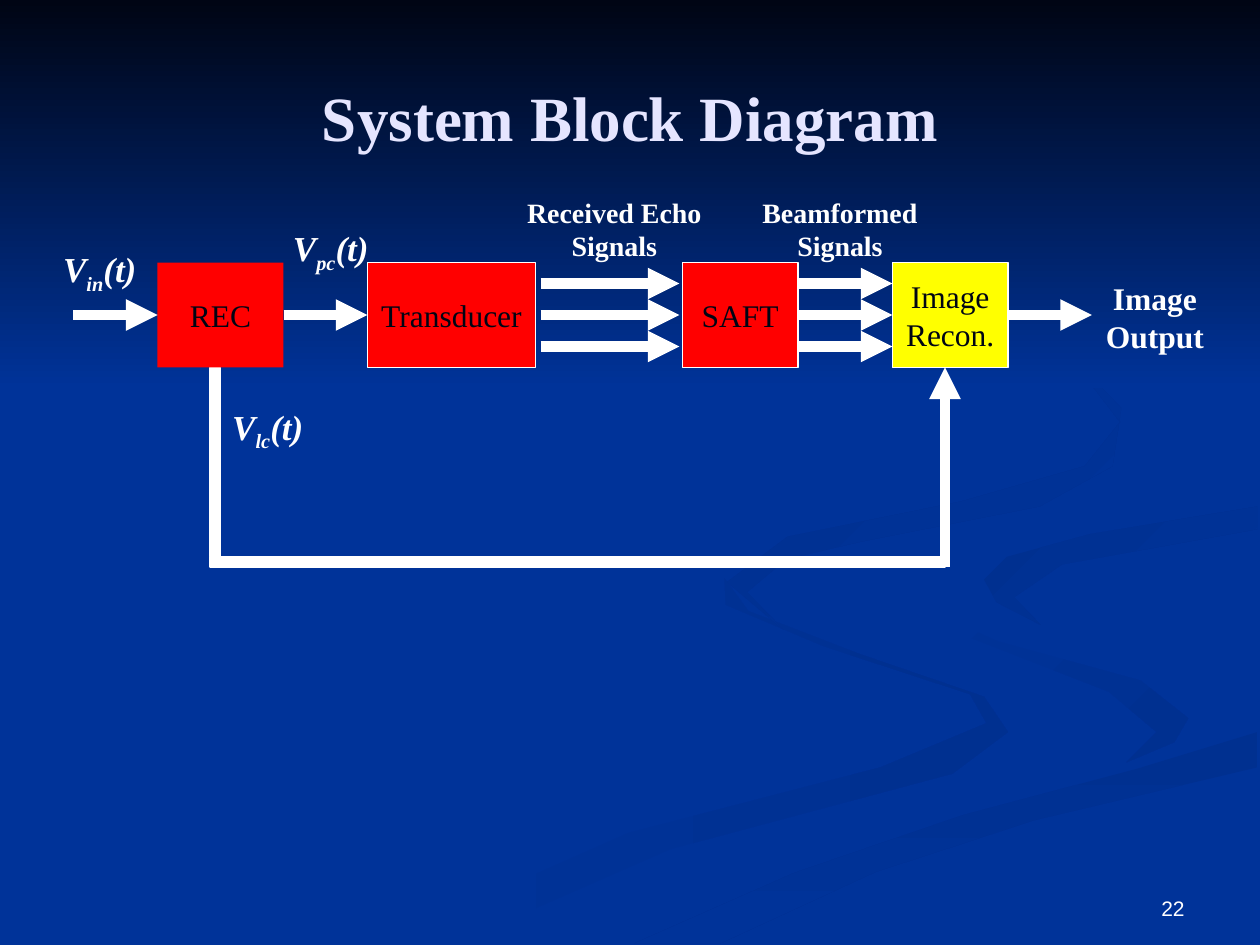
import pptx
import pptx.util
from pptx.dml.color import RGBColor
from pptx.enum.shapes import MSO_CONNECTOR, MSO_SHAPE
from pptx.enum.text import MSO_ANCHOR, PP_ALIGN
from pptx.oxml.ns import qn
from lxml import etree

BLUE = RGBColor(0x00, 0x33, 0x99)
NIGHT = RGBColor(0x00, 0x05, 0x14)
LAVENDER = RGBColor(0xE5, 0xE5, 0xFF)
WHITE = RGBColor(0xFF, 0xFF, 0xFF)
RED = RGBColor(0xFF, 0x00, 0x00)
YELLOW = RGBColor(0xFF, 0xFF, 0x00)
SHADE = RGBColor(0x00, 0x30, 0x90)

SERIF = "Times New Roman"
CELLS_PER_INCH = 12
TOP, MIDDLE, BOTTOM, LEFT, RIGHT = 25, 30, 35, 1, 3  # block rows, side numbers
SIGNAL_ROWS = (MIDDLE - 3, MIDDLE, MIDDLE + 3)

# Background ribbons: outline in hundredths of an inch, colours, gradient angle
RIBBONS = [
    ([(781, 553), (682, 519), (594, 485), (575, 459), (576, 480), (654, 513),
      (770, 551), (783, 574), (699, 609), (499, 661), (300, 749), (361, 749),
      (532, 674), (756, 614), (800, 581)], BLUE, SHADE, 0),
    ([(943, 570), (905, 540), (792, 509), (733, 483), (724, 464), (739, 494),
      (880, 549), (918, 581), (894, 605), (932, 589)], BLUE, SHADE, 45),
    ([(503, 749), (571, 749), (695, 692), (821, 651), (998, 609), (998, 581),
      (903, 610), (764, 647), (630, 693)], SHADE, BLUE, 90),
    ([(781, 460), (791, 478), (826, 496), (805, 474), (843, 448), (998, 420),
      (998, 402), (865, 424), (799, 442)], SHADE, BLUE, 45),
    ([(683, 430), (825, 402), (883, 370), (890, 324), (843, 275), (762, 233),
      (846, 279), (889, 335), (861, 370), (763, 398), (625, 426), (577, 462),
      (622, 500), (593, 470), (624, 444)], SHADE, BLUE, 45),
]


def cells(*counts):
    """Turn grid cells into lengths."""
    return [pptx.util.Inches(count / CELLS_PER_INCH) for count in counts]


def shade(shape, start_color, end_color, angle):
    shape.shadow.inherit = False
    shape.line.fill.background()
    shape.fill.gradient()
    shape.fill.gradient_angle = -angle % 360
    for stop, color in zip(shape.fill.gradient_stops, (start_color, end_color)):
        stop.color.rgb = color


def add_ribbon(slide, outline, *colors_and_angle):
    builder = slide.shapes.build_freeform(*outline[0], scale=pptx.util.Inches(0.01))
    builder.add_line_segments(outline[1:], close=True)
    shade(builder.convert_to_shape(), *colors_and_angle)


def add_box(slide, area, color, outlined=True):
    box = slide.shapes.add_shape(MSO_SHAPE.RECTANGLE, *cells(*area))
    box.shadow.inherit = False
    box.fill.solid()
    box.fill.fore_color.rgb = color
    if outlined:
        box.line.color.rgb = WHITE
        box.line.width = pptx.util.Pt(0.75)
    else:
        box.line.fill.background()
    return box


def style(paragraph, size, color, bold=False, italic=False, font=SERIF,
          align=PP_ALIGN.CENTER):
    paragraph.alignment = align
    paragraph.font.name = font
    paragraph.font.size = pptx.util.Pt(size)
    paragraph.font.color.rgb = color
    paragraph.font.bold = bold
    paragraph.font.italic = italic


def add_block(slide, left, width, name, color=RED, outlined=True):
    block = add_box(slide, (left, TOP, width, BOTTOM - TOP), color, outlined)
    frame = block.text_frame
    frame.word_wrap = False
    frame.vertical_anchor = MSO_ANCHOR.MIDDLE
    frame.text = name
    for paragraph in frame.paragraphs:
        style(paragraph, 18, NIGHT)
    return block


def add_label(slide, area, text, size, color=WHITE, anchor=MSO_ANCHOR.TOP, **look):
    frame = slide.shapes.add_textbox(*cells(*area)).text_frame
    frame.word_wrap = True
    frame.vertical_anchor = anchor
    paragraph = frame.paragraphs[0]
    paragraph.text = text
    style(paragraph, size, color, **look)
    return paragraph


def add_voltage(slide, left, top, subscript):
    paragraph = add_label(slide, (left, top, 19, 5.25), "V", 20, bold=True, italic=True)
    index = paragraph.add_run()
    index.text = subscript
    index.font._element.set("baseline", "-25000")
    paragraph.add_run().text = "(t)"


def add_arrow(slide, start, end, source=None, target=None):
    arrow = slide.shapes.add_connector(MSO_CONNECTOR.STRAIGHT, *cells(*start, *end))
    if source is not None:
        arrow.begin_connect(source, RIGHT)
    if target is not None:
        arrow.end_connect(target, LEFT)
    arrow.line.color.rgb = WHITE
    arrow.line.width = pptx.util.Pt(6)
    etree.SubElement(arrow.line._get_or_add_ln(), qn("a:tailEnd"), type="triangle")
    etree.SubElement(arrow._element.spPr, qn("a:effectLst"))


def main():
    deck = pptx.Presentation()
    deck.slide_width, deck.slide_height = cells(120, 90)
    slide = deck.slides.add_slide(deck.slide_layouts[6])

    # Background
    slide.background.fill.solid()
    slide.background.fill.fore_color.rgb = BLUE
    for ribbon in RIBBONS:
        add_ribbon(slide, *ribbon)
    night_sky = slide.shapes.add_shape(MSO_SHAPE.RECTANGLE, *cells(0, 0, 120, 37))
    shade(night_sky, NIGHT, BLUE, 90)

    # Feedback path from REC to image reconstruction
    add_arrow(slide, (90, 54), (90, BOTTOM))
    add_box(slide, (20, 53, 70, 1), WHITE)
    add_box(slide, (20, BOTTOM, 1, 18), WHITE)

    add_label(slide, (6, 3.6, 108, 15), "System Block Diagram", 36, LAVENDER,
              MSO_ANCHOR.MIDDLE, bold=True)

    # Processing blocks
    rec = add_block(slide, 15, 12, "REC", outlined=False)
    transducer = add_block(slide, 35, 16, "Transducer")
    saft = add_block(slide, 65, 11, "SAFT")
    recon = add_block(slide, 85, 11, "Image\nRecon.", YELLOW)

    # Signals between the blocks
    add_arrow(slide, (7, MIDDLE), (15, MIDDLE), target=rec)
    add_arrow(slide, (27, MIDDLE), (35, MIDDLE), rec, transducer)
    add_arrow(slide, (96, MIDDLE), (104, MIDDLE), recon)
    for row in SIGNAL_ROWS:
        ends = (saft, recon) if row == MIDDLE else ()
        add_arrow(slide, (51.5, row), (64.7, row))
        add_arrow(slide, (76, row), (85, row), *ends)

    # Signal names
    add_label(slide, (48, 18, 21, 7.7), "Received Echo Signals", 16, bold=True)
    add_label(slide, (71, 18, 18, 7.7), "Beamformed Signals", 16, bold=True)
    add_label(slide, (104, 26, 12, 8.5), "Image Output", 18, bold=True)
    for left, top, subscript in ((0, 23, "in"), (22, 21, "pc"), (16, 38, "lc")):
        add_voltage(slide, left, top, subscript)

    # Page number
    add_label(slide, (86, 82, 28, 6.25), "22", 12, anchor=MSO_ANCHOR.BOTTOM,
              font="Arial", align=PP_ALIGN.RIGHT)

    deck.save("out.pptx")


if __name__ == "__main__":
    main()
